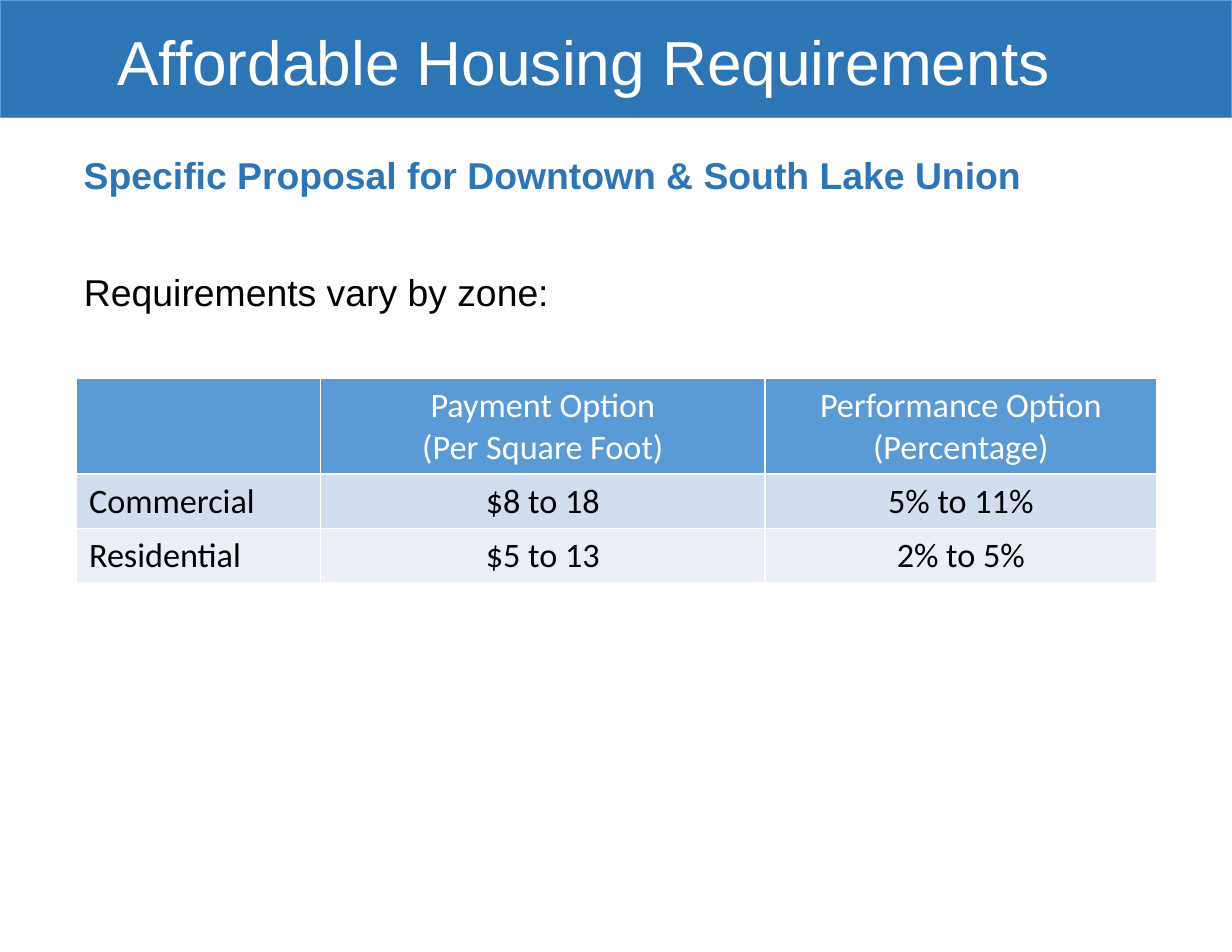
from lxml import etree
from pptx import Presentation
from pptx.dml.color import RGBColor
from pptx.enum.shapes import MSO_SHAPE
from pptx.enum.text import MSO_ANCHOR, PP_ALIGN
from pptx.oxml.ns import qn
from pptx.util import Cm, Pt

RECTANGLE = MSO_SHAPE.RECTANGLE
TOP = MSO_ANCHOR.TOP
LEFT, CENTER = PP_ALIGN.LEFT, PP_ALIGN.CENTER

COLORS = {
    "band": "2E75B6",
    "header": "5B9BD5",
    "odd_row": "D2DEEF",
    "even_row": "EAEFF7",
    "white": "FFFFFF",
    "black": "000000",
}

OPTIONS = [
    ["", "Payment Option\n(Per Square Foot)", "Performance Option (Percentage)"],
    ["Commercial", "$8 to 18", "5% to 11%"],
    ["Residential", "$5 to 13", "2% to 5%"],
]
COLUMN_WIDTHS = [5.53, 10.08, 8.88]
ROW_HEIGHTS = [2.16, 1.23, 1.23]


def color(name):
    return RGBColor.from_string(COLORS[name])


def place(shape, box):
    shape.left, shape.top, shape.width, shape.height = (Cm(length) for length in box)


def style_text(frame, font_name, size, color_name, align=LEFT, bold=False):
    for para in frame.paragraphs:
        para.alignment = align
        para.font.name = font_name
        para.font.size = Pt(size)
        para.font.bold = bold
        para.font.color.rgb = color(color_name)


def add_title_band(page, band_box, title_box):
    band = page.shapes.add_shape(RECTANGLE, *(Cm(length) for length in band_box))
    band.shadow.inherit = False
    band.fill.solid()
    band.fill.fore_color.rgb = color("band")
    band.line.color.rgb = color("header")
    band.line.width = Pt(0.75)
    # Send the band behind the placeholders
    page.shapes._spTree.insert(2, band._element)

    title = page.shapes.title
    place(title, title_box)
    title.text_frame.text = "Affordable Housing Requirements"
    title.text_frame.vertical_anchor = TOP
    style_text(title.text_frame, "Arial", 40, "white", CENTER)


def add_subtitle(page, box):
    frame = page.shapes.add_textbox(*(Cm(length) for length in box)).text_frame
    frame.word_wrap = True
    frame.text = "Specific Proposal for Downtown & South Lake Union"
    style_text(frame, "Arial", 24, "band", bold=True)


def fill_body(page, box):
    body = page.placeholders[1]
    place(body, box)
    frame = body.text_frame
    frame.text = "Requirements vary by zone:"
    frame.vertical_anchor = TOP
    style_text(frame, "Arial", 24, "black")
    para = frame.paragraphs[0]
    para.line_spacing = 0.9
    para.space_before = Pt(10)
    # No bullet, no hanging indent
    properties = para._p.get_or_add_pPr()
    properties.set("marL", "0")
    properties.set("indent", "0")
    etree.SubElement(properties, qn("a:buNone"))
    properties.append(properties.find(qn("a:defRPr")))


def add_options_table(page, left, top):
    table = page.shapes.add_table(
        len(OPTIONS), len(COLUMN_WIDTHS), Cm(left), Cm(top),
        Cm(sum(COLUMN_WIDTHS)), Cm(sum(ROW_HEIGHTS))).table
    for column, width in zip(table.columns, COLUMN_WIDTHS):
        column.width = Cm(width)

    fills = ["header", "odd_row", "even_row"]
    for row_index, (row, height) in enumerate(zip(table.rows, ROW_HEIGHTS)):
        row.height = Cm(height)
        for column_index, cell in enumerate(row.cells):
            cell.text = OPTIONS[row_index][column_index]
            cell.fill.solid()
            cell.fill.fore_color.rgb = color(fills[row_index])
            cell.margin_left = cell.margin_right = Cm(0.28)
            cell.margin_top = cell.margin_bottom = Cm(0.15)
            style_text(cell.text_frame, "Calibri", 22,
                       "black" if row_index else "white",
                       CENTER if column_index else LEFT)


def main():
    deck = Presentation()
    deck.slide_width, deck.slide_height = Cm(27.94), Cm(21.59)
    page = deck.slides.add_slide(deck.slide_layouts[1])

    add_title_band(page, (0, 0, 27.94, 2.67), (0.33, 0.41, 25.8, 1.96))
    add_subtitle(page, (1.65, 3.33, 25, 1.27))
    fill_body(page, (1.65, 6.1, 24.1, 13.18))
    add_options_table(page, 1.74, 8.59)

    deck.save("out.pptx")


if __name__ == "__main__":
    main()
